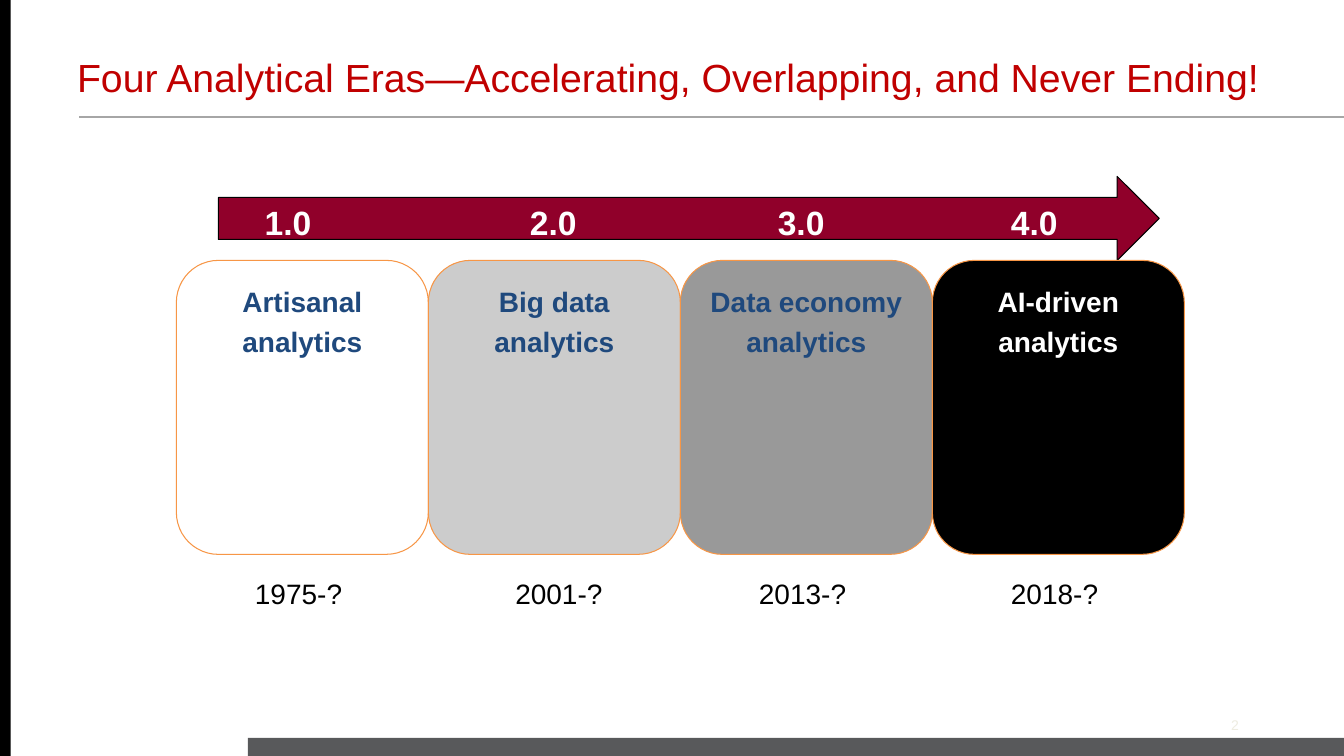
from pptx import Presentation
from pptx.dml.color import RGBColor
from pptx.enum.shapes import MSO_CONNECTOR as Connector, MSO_SHAPE as Shape
from pptx.enum.text import MSO_ANCHOR as Anchor, PP_ALIGN as Align
from pptx.oxml.ns import qn
from pptx.util import Pt
from lxml.etree import SubElement


def color(hex_text):
    return RGBColor.from_string(hex_text)


def add_block(kind, box, text="", fill=None, line=None, size=20, ink="000000",
              bold=False, align=Align.LEFT, anchor=Anchor.TOP, spacing=1.0, wrap=True):
    """Add a preset shape, or a text box when kind is None."""
    lengths = [Pt(value) for value in box]
    if kind is None:
        block = page.shapes.add_textbox(*lengths)
    else:
        block = page.shapes.add_shape(kind, *lengths)
        block.shadow.inherit = False
        block.fill.solid()
        block.fill.fore_color.rgb = color(fill)
        if line:
            block.line.color.rgb = color(line)
            block.line.width = Pt(0.75)
        else:
            block.line.fill.background()
    frame = block.text_frame
    frame.word_wrap = wrap
    frame.vertical_anchor = anchor
    frame.text = text
    for para in frame.paragraphs:
        para.alignment = align
        para.line_spacing = spacing
        for span in para.runs:
            font_format = {"name": "Arial", "size": Pt(size), "bold": bold}
            for name, value in font_format.items():
                setattr(span.font, name, value)
            span.font.color.rgb = color(ink)
    return block


deck = Presentation()
deck.slide_width, deck.slide_height = Pt(960), Pt(540)
page = deck.slides.add_slide(deck.slide_layouts[6])

# Page frame: left bar, title rule, footer bar and page number
add_block(Shape.RECTANGLE, (0, 0, 7.6, 540), fill="000000")
rule = page.shapes.add_connector(Connector.STRAIGHT, Pt(56.6), Pt(83.5), Pt(960), Pt(83.5))
rule.line.color.rgb = color("A6A6A6")
rule.line.width = Pt(1.5)
SubElement(rule.element.spPr, qn("a:effectLst"))
add_block(Shape.RECTANGLE, (177, 527, 783, 13), fill="58595B")
add_block(None, (842, 508, 50, 20), "2", size=10, ink="EEECE1", align=Align.RIGHT)

# Title
add_block(None, (48, 18, 868, 57.6),
          "Four Analytical Eras—Accelerating, Overlapping, and Never Ending!",
          size=28, ink="C00000", anchor=Anchor.BOTTOM)

# Timeline arrow, with its version numbers on tab stops
arrow = add_block(Shape.RIGHT_ARROW, (156, 126, 672, 60), "\t1.0\t2.0\t3.0\t4.0",
                  fill="90002A", line="000000", size=24, ink="FFFFFF", bold=True)
properties = arrow.text_frame.paragraphs[0]._p.get_or_add_pPr()
tab_list = SubElement(properties, qn("a:tabLst"))
for stop in (26, 215.5, 392.5, 559):
    SubElement(tab_list, qn("a:tab"), pos=str(Pt(stop)), algn="l")

# Eras: name, box fill, text colour, dates, left edge of the dates
eras = [
    ("Artisanal analytics", "FFFFFF", "1F497D", "1975-?", 175),
    ("Big data\nanalytics", "CCCCCC", "1F497D", "2001-?", 361),
    ("Data economy\nanalytics", "999999", "1F497D", "2013-?", 535),
    ("AI-driven\nanalytics", "000000", "FFFFFF", "2018-?", 715),
]
era_width = 180
for index, (era, fill, ink, dates, dates_left) in enumerate(eras):
    add_block(Shape.ROUNDED_RECTANGLE, (126 + index * era_width, 186, era_width, 210), era,
              fill=fill, line="F79646", ink=ink, bold=True, align=Align.CENTER, spacing=1.2)
    add_block(None, (dates_left, 408, 77, 31.5), dates, wrap=False)

deck.save("out.pptx")
